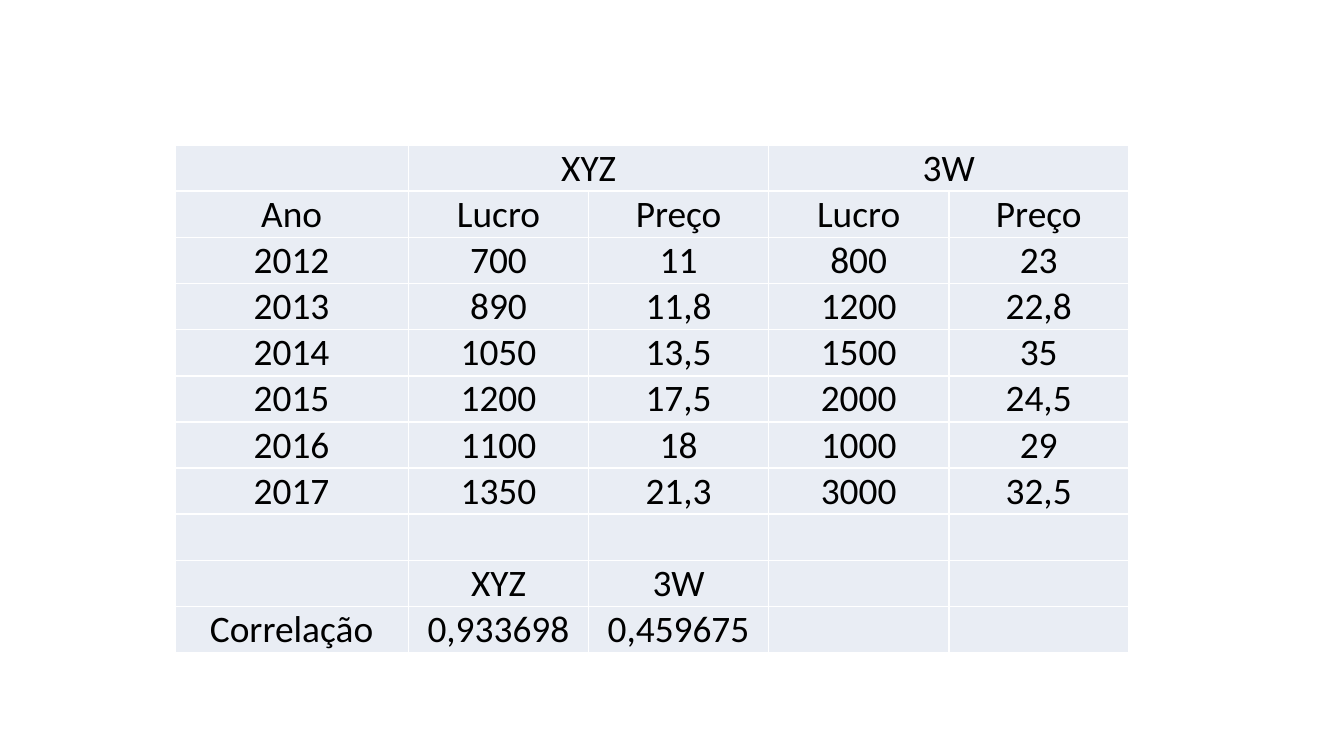
"""Build a slide with a table of yearly profit, price and correlation."""
from lxml import etree
from pptx import Presentation
from pptx.dml.color import RGBColor
from pptx.enum import text
from pptx.oxml import ns
from pptx.util import Inches, Pt

BLACK = RGBColor(0x00, 0x00, 0x00)
WHITE = RGBColor(0xFF, 0xFF, 0xFF)
PALE_BLUE = RGBColor(0xE9, 0xED, 0xF4)

ROWS = [
    ["", "XYZ", "", "3W", ""],
    ["Ano", "Lucro", "Preço", "Lucro", "Preço"],
    ["2012", "700", "11", "800", "23"],
    ["2013", "890", "11,8", "1200", "22,8"],
    ["2014", "1050", "13,5", "1500", "35"],
    ["2015", "1200", "17,5", "2000", "24,5"],
    ["2016", "1100", "18", "1000", "29"],
    ["2017", "1350", "21,3", "3000", "32,5"],
    ["", "", "", "", ""],
    ["", "XYZ", "3W", "", ""],
    ["Correlação", "0,933698", "0,459675", "", ""],
]
COLUMN_WIDTHS = [1.74, 1.34, 1.34, 1.34, 1.34]
TABLE_HEIGHT = 3.78


def add_borders(cell):
    properties = cell._tc.get_or_add_tcPr()
    for side in ("a:lnL", "a:lnR", "a:lnT", "a:lnB"):
        line = etree.SubElement(properties, ns.qn(side), w=str(Pt(1)))
        fill = etree.SubElement(line, ns.qn("a:solidFill"))
        etree.SubElement(fill, ns.qn("a:srgbClr"), val=str(WHITE))


presentation = Presentation()
presentation.slide_width = Inches(10)
presentation.slide_height = Inches(10) * 9 // 16
slide = presentation.slides.add_slide(presentation.slide_layouts[6])

table = slide.shapes.add_table(
    len(ROWS), len(COLUMN_WIDTHS), Inches(1.3), Inches(1.08),
    Inches(sum(COLUMN_WIDTHS)), Inches(TABLE_HEIGHT),
).table
table.first_row = False
table.horz_banding = False
for column, width in zip(table.columns, COLUMN_WIDTHS):
    column.width = Inches(width)
for row in table.rows:
    row.height = Inches(TABLE_HEIGHT / len(ROWS))

for row_index, values in enumerate(ROWS):
    for column_index, value in enumerate(values):
        cell = table.cell(row_index, column_index)
        cell.margin_left = cell.margin_right = Inches(0.01)
        cell.margin_top = cell.margin_bottom = Inches(0)
        cell.vertical_anchor = text.MSO_ANCHOR.BOTTOM
        add_borders(cell)
        cell.fill.solid()
        cell.fill.fore_color.rgb = PALE_BLUE
        if value:
            paragraph = cell.text_frame.paragraphs[0]
            paragraph.alignment = text.PP_ALIGN.CENTER
            run = paragraph.add_run()
            run.text = value
            run.font.name = "Calibri"
            run.font.size = Pt(20)
            run.font.color.rgb = BLACK

for first_column in (1, 3):
    table.cell(0, first_column).merge(table.cell(0, first_column + 1))

presentation.save("out.pptx")
